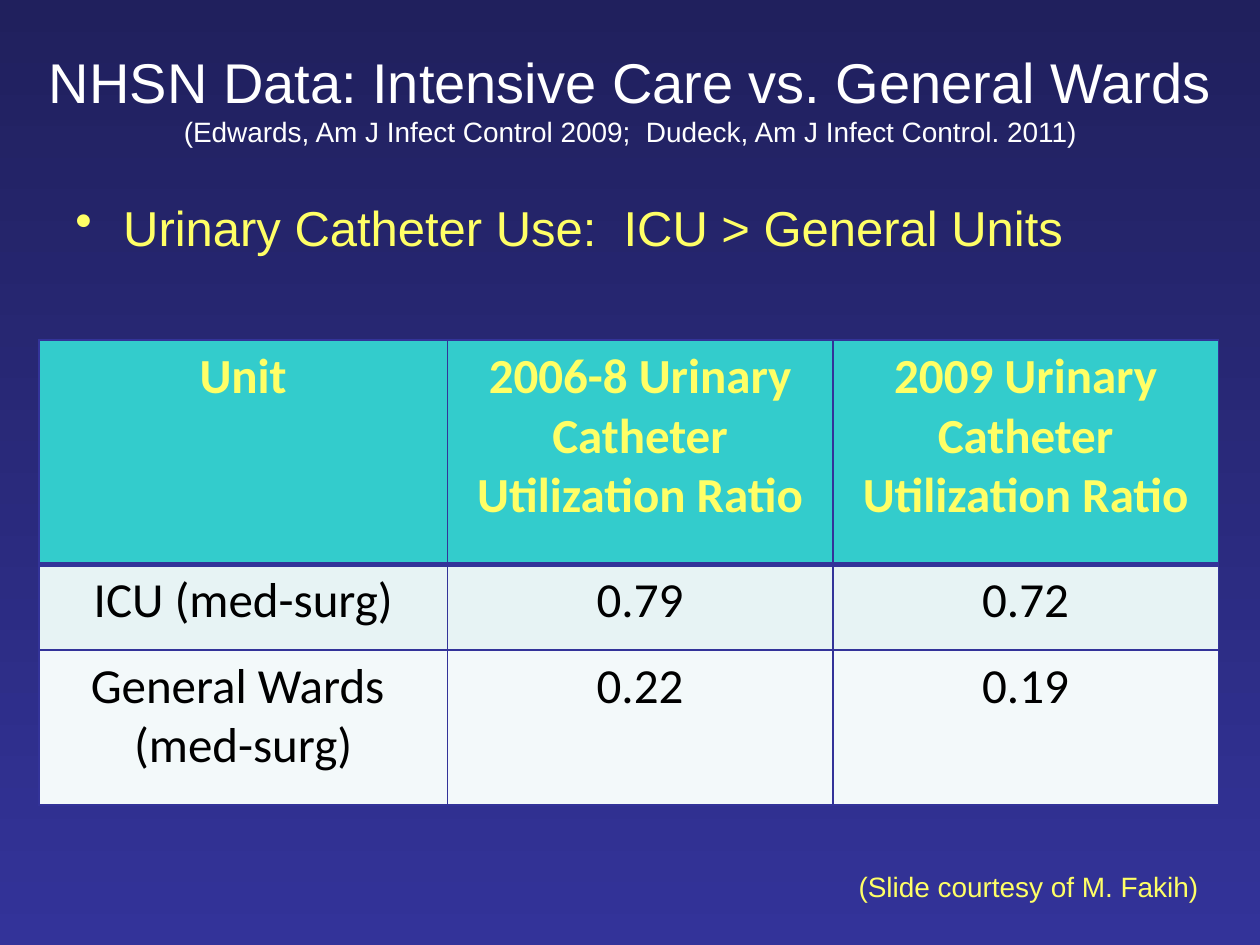
from lxml.etree import SubElement
from pptx import Presentation
from pptx.dml.color import RGBColor
from pptx.enum.text import MSO_ANCHOR, PP_ALIGN
from pptx.oxml.ns import qn
from pptx.util import Inches, Pt

COLORS = {
    "top": "20205D", "bottom": "333399", "title": "FFFFFF", "accent": "FFFF66",
    "header": "33CCCC", "band": "E7F3F4", "plain": "F3F9FA", "ink": "000000",
}


def rgb(name):
    return RGBColor.from_string(COLORS[name])


class Deck:
    """Hold the style and the current slide, and add elements to it."""

    def __init__(self, prs):
        self.font, self.table_font = "Arial", "Calibri"
        self.s = prs.slides.add_slide(prs.slide_layouts[6])

    def background(self, top, bottom):
        fill = self.s.background.fill
        fill.gradient()
        fill.gradient_angle = 270
        for stop, color, pos in zip(fill.gradient_stops, (top, bottom), (0, 1)):
            stop.color.rgb = rgb(color)
            stop.position = pos

    def style(self, p, size, color, align, font=None, bold=False):
        p.alignment = align
        p.font.name = font or self.font
        p.font.size = Pt(size)
        p.font.bold = bold
        p.font.color.rgb = rgb(color)

    def text(self, box, text, size, color, align, anchor=MSO_ANCHOR.TOP):
        sp = self.s.shapes.add_textbox(*map(Inches, box))
        tf = sp.text_frame
        tf.word_wrap = True
        tf.vertical_anchor = anchor
        p = tf.paragraphs[0]
        p.add_run().text = text
        self.style(p, size, color, align)
        return p

    def title(self, box, title, source):
        p = self.text(box, title, 32, "title", PP_ALIGN.CENTER, MSO_ANCHOR.MIDDLE)
        p.runs[0].font.size = Pt(32)
        p.add_line_break()
        r = p.add_run()
        r.text = source
        r.font.size = Pt(16)

    def bullet(self, box, text):
        p = self.text(box, text, 28, "accent", PP_ALIGN.LEFT)
        pPr = p._p.get_or_add_pPr()
        pPr.set("marL", str(Inches(0.38)))
        pPr.set("indent", str(-Inches(0.38)))
        bullet = pPr.makeelement(qn("a:buChar"), {"char": "•"})
        pPr.insert_element_before(bullet, "a:tabLst", "a:defRPr", "a:extLst")
        p.space_before = Pt(5.6)

    def borders(self, cell, top, bottom):
        tcPr = cell._tc.get_or_add_tcPr()
        for side, width in (("L", 1), ("R", 1), ("T", top), ("B", bottom)):
            ln = SubElement(tcPr, qn(f"a:ln{side}"), w=str(Pt(width)))
            fill = SubElement(ln, qn("a:solidFill"))
            SubElement(fill, qn("a:srgbClr"), val=COLORS["bottom"])

    def table(self, box, rows, widths, heights, fills):
        shape = self.s.shapes.add_table(len(rows), len(widths), *map(Inches, box))
        table = shape.table
        for column, width in zip(table.columns, widths):
            column.width = Inches(width)
        for i, row in enumerate(rows):
            table.rows[i].height = Inches(heights[i])
            header = i == 0
            for j, text in enumerate(row):
                cell = table.cell(i, j)
                self.borders(cell, 3 if i == 1 else 1, 3 if header else 1)
                cell.fill.solid()
                cell.fill.fore_color.rgb = rgb(fills[i])
                cell.text = text
                for p in cell.text_frame.paragraphs:
                    self.style(p, 28, "accent" if header else "ink",
                               PP_ALIGN.CENTER, self.table_font, header)


def main():
    prs = Presentation()
    prs.slide_width, prs.slide_height = Inches(10), Inches(7.5)
    deck = Deck(prs)
    deck.background("top", "bottom")
    deck.title((0.11, 0.15, 9.79, 1.25),
               "NHSN Data: Intensive Care vs. General Wards",
               "(Edwards, Am J Infect Control 2009;  Dudeck, Am J Infect Control. 2011)")
    deck.table((0.31, 2.7, 9.37, 3.69), [
        ("Unit", "2006-8 Urinary Catheter Utilization Ratio",
         "2009 Urinary Catheter Utilization Ratio"),
        ("ICU (med-surg)", "0.79", "0.72"),
        ("General Wards \n(med-surg)", "0.22", "0.19"),
    ], (3.24, 3.06, 3.06), (1.78, 0.68, 1.23), ("header", "band", "plain"))
    deck.bullet((0.5, 1.52, 9, 1.08), "Urinary Catheter Use:  ICU > General Units")
    deck.text((5.3, 6.85, 4.31, 0.37), "(Slide courtesy of M. Fakih)",
              16, "accent", PP_ALIGN.RIGHT)
    prs.save("out.pptx")


if __name__ == "__main__":
    main()
